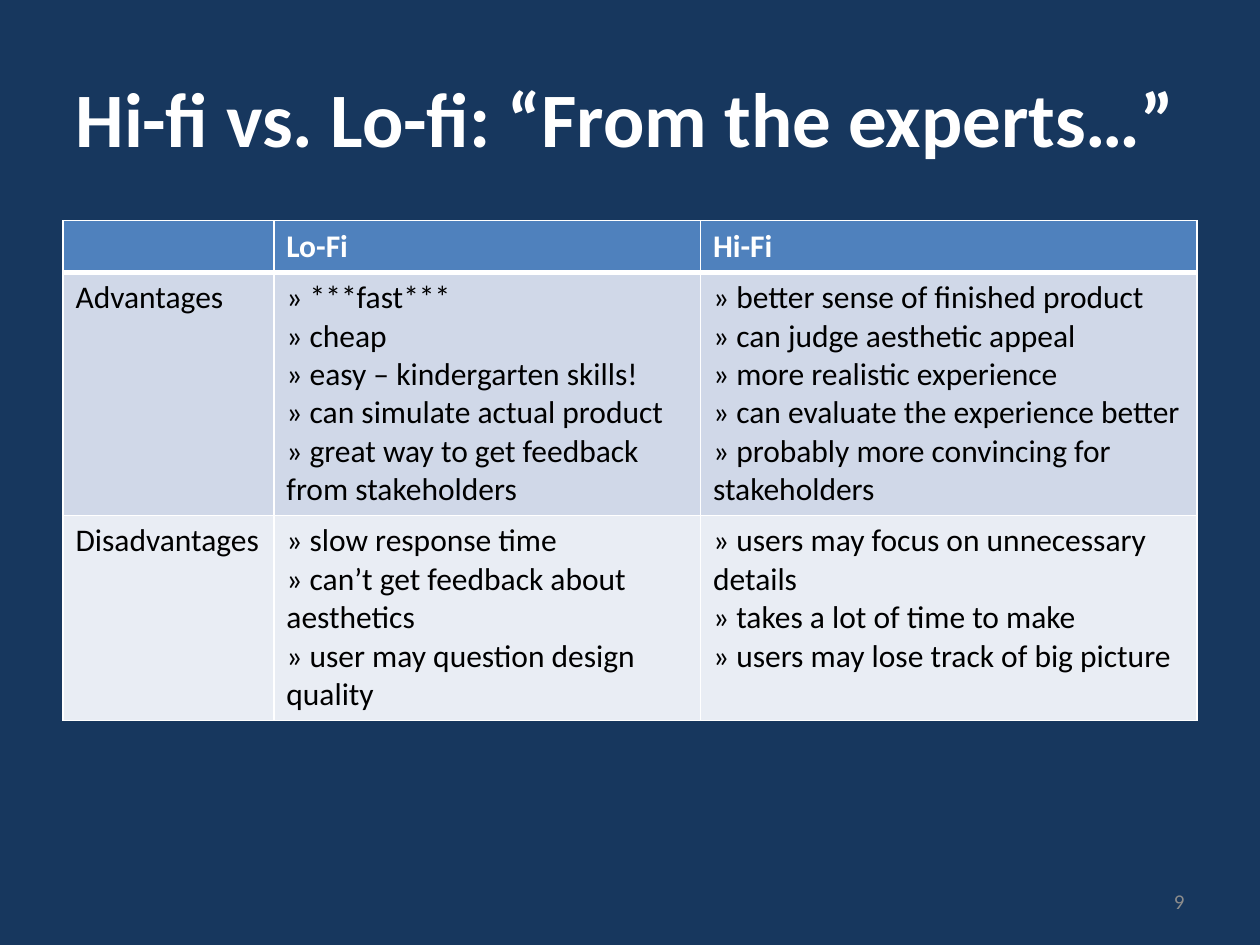
import pptx
import pptx.util
import pptx.dml.color
import pptx.enum.text
import pptx.oxml.ns
import lxml.etree

Cm, Pt = pptx.util.Cm, pptx.util.Pt
Align = pptx.enum.text.PP_ALIGN
Anchor = pptx.enum.text.MSO_ANCHOR

# Content
TITLE = "Hi-fi vs. Lo-fi: “From the experts…”"
PAGE = "9"
ROWS = [
    [[], ["Lo-Fi"], ["Hi-Fi"]],
    [
        ["Advantages"],
        ["» ***fast***", "» cheap", "» easy – kindergarten skills!",
         "» can simulate actual product",
         "» great way to get feedback from stakeholders"],
        ["» better sense of finished product", "» can judge aesthetic appeal",
         "» more realistic experience",
         "» can evaluate the experience better",
         "» probably more convincing for stakeholders"],
    ],
    [
        ["Disadvantages"],
        ["» slow response time", "» can’t get feedback about aesthetics",
         "» user may question design quality"],
        ["» users may focus on unnecessary details",
         "» takes a lot of time to make",
         "» users may lose track of big picture"],
    ],
]

# Style
FONT = "Calibri"
HEX = {"back": "17375E", "white": "FFFFFF", "black": "000000",
       "head": "4F81BD", "odd": "D0D8E8", "even": "E9EDF4", "page": "8C8C8C"}
FILLS = ["head", "odd", "even"]
WIDTHS = [4.25, 8.6, 10.01]
HEIGHTS = [1.04, 4.9, 4.1]
LEFT, WIDE = 1.27, 22.86


def color(name):
    return pptx.dml.color.RGBColor.from_string(HEX[name])


def write(frame, lines, size, ink, bold=False, align=Align.LEFT):
    for i, line in enumerate(lines):
        para = frame.paragraphs[0] if i == 0 else frame.add_paragraph()
        para.alignment = align
        run = para.add_run()
        run.text = line
        run.font.name, run.font.size, run.font.bold = FONT, Pt(size), bold
        run.font.color.rgb = color(ink)


def edge(cell, side, width):
    props = cell._tc.get_or_add_tcPr()
    tag = pptx.oxml.ns.qn
    line = lxml.etree.SubElement(props, tag("a:ln" + side), w=str(Pt(width)))
    fill = lxml.etree.SubElement(line, tag("a:solidFill"))
    lxml.etree.SubElement(fill, tag("a:srgbClr"), val=HEX["white"])


def main():
    deck = pptx.Presentation()
    deck.slide_width, deck.slide_height = Cm(25.4), Cm(19.05)
    slide = deck.slides.add_slide(deck.slide_layouts[5])
    slide.background.fill.solid()
    slide.background.fill.fore_color.rgb = color("back")

    # Title
    title = slide.shapes.title
    title.left, title.top = Cm(LEFT), Cm(0.76)
    title.width, title.height = Cm(WIDE), Cm(3.18)
    title.text_frame.vertical_anchor = Anchor.MIDDLE
    write(title.text_frame, [TITLE], 44, "white", True)

    # Comparison table
    table = slide.shapes.add_table(
        len(ROWS), len(WIDTHS), Cm(LEFT), Cm(4.45),
        Cm(WIDE), Cm(sum(HEIGHTS))).table
    for col, width in zip(table.columns, WIDTHS):
        col.width = Cm(width)
    for r, row in enumerate(ROWS):
        table.rows[r].height = Cm(HEIGHTS[r])
        head = r == 0
        for c, lines in enumerate(row):
            cell = table.cell(r, c)
            # The rule under the header is heavier
            for side in "LRTB":
                heavy = (r, side) in [(0, "B"), (1, "T")]
                edge(cell, side, 3 if heavy else 1)
            cell.fill.solid()
            cell.fill.fore_color.rgb = color(FILLS[r])
            write(cell.text_frame, lines, 18,
                  "white" if head else "black", head)

    # Page number
    box = slide.shapes.add_textbox(Cm(18.2), Cm(17.66), Cm(5.93), Cm(1.01))
    box.text_frame.word_wrap = True
    box.text_frame.vertical_anchor = Anchor.MIDDLE
    write(box.text_frame, [PAGE], 12, "page", align=Align.RIGHT)

    deck.save("out.pptx")


if __name__ == "__main__":
    main()
